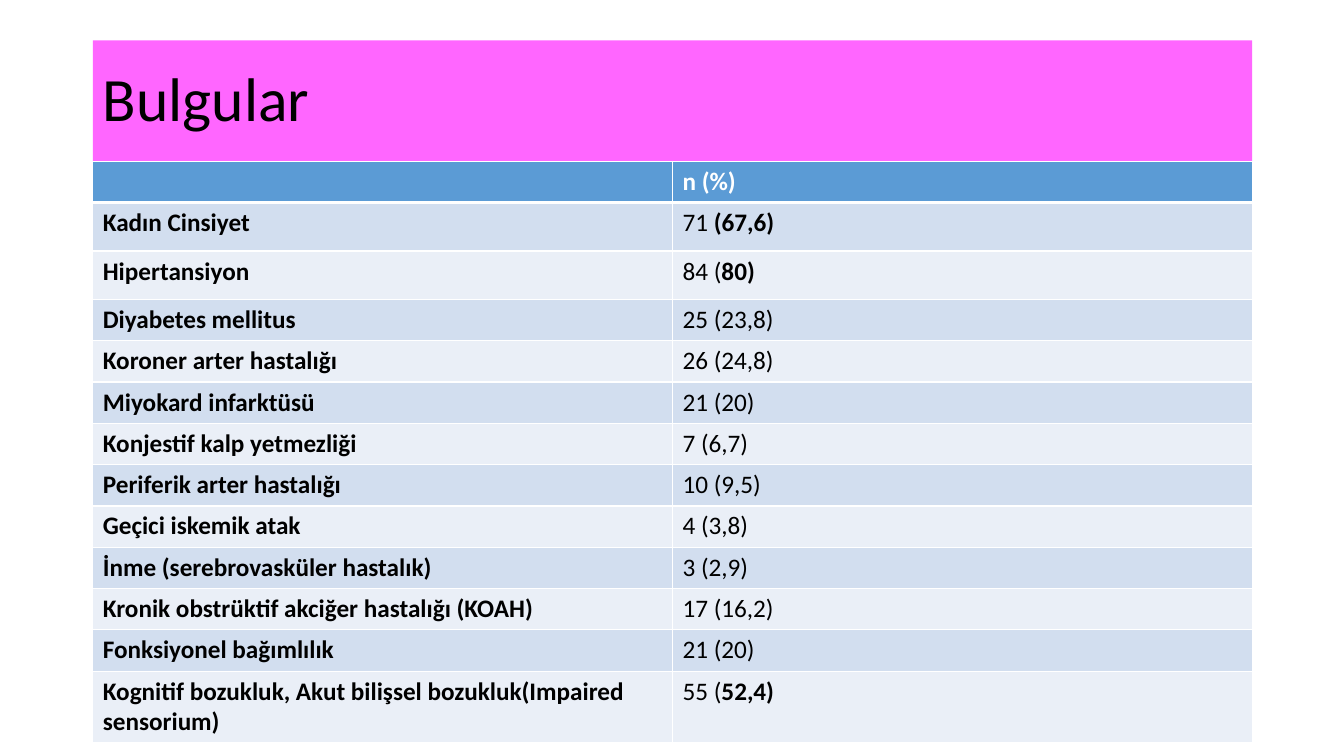
from lxml import etree
from pptx import Presentation
from pptx.dml.color import RGBColor
from pptx.enum.text import MSO_ANCHOR, MSO_AUTO_SIZE, PP_ALIGN
from pptx.oxml.ns import qn
from pptx.util import Inches, Pt

MIDDLE = MSO_ANCHOR.MIDDLE
NO_AUTOFIT = MSO_AUTO_SIZE.NONE
LEFT = PP_ALIGN.LEFT
TITLE_ONLY = 5

COLORS = {
    "title": "FF66FF",
    "header": "5B9BD5",
    "odd": "D2DEEF",
    "even": "EAEFF7",
    "white": "FFFFFF",
    "text": "000000",
}

# Finding, plain part of the value, bold part of the value
FINDINGS = [
    ("Kadın Cinsiyet", "71 ", "(67,6)"),
    ("Hipertansiyon", "84 (", "80)"),
    ("Diyabetes mellitus", "25 (23,8)", ""),
    ("Koroner arter hastalığı", "26 (24,8)", ""),
    ("Miyokard infarktüsü", "21 (20)", ""),
    ("Konjestif kalp yetmezliği", "7 (6,7)", ""),
    ("Periferik arter hastalığı", "10 (9,5)", ""),
    ("Geçici iskemik atak", "4 (3,8)", ""),
    ("İnme (serebrovasküler hastalık)", "3 (2,9)", ""),
    ("Kronik obstrüktif akciğer hastalığı (KOAH)", "17 (16,2)", ""),
    ("Fonksiyonel bağımlılık", "21 (20)", ""),
    ("Kognitif bozukluk, Akut bilişsel bozukluk(Impaired sensorium)", "55 (", "52,4)"),
]
ROW_HEIGHTS = [0.41, 0.48, 0.48] + [0.41] * 10


class SlideBuilder:
    def __init__(self, slide, font="Calibri"):
        self.slide = slide
        self.font_name = font

    def style_font(self, font, size, color):
        font.name = self.font_name
        font.size = Pt(size)
        font.color.rgb = RGBColor.from_string(COLORS[color])

    def title(self, text, left, top, width, height):
        title = self.slide.shapes.title
        title.left, title.top = Inches(left), Inches(top)
        title.width, title.height = Inches(width), Inches(height)
        title.fill.solid()
        title.fill.fore_color.rgb = RGBColor.from_string(COLORS["title"])
        frame = title.text_frame
        frame.text = text
        frame.word_wrap = True
        frame.auto_size = NO_AUTOFIT
        frame.vertical_anchor = MIDDLE
        heading = frame.paragraphs[0]
        heading.alignment = LEFT
        heading.line_spacing = 0.9
        self.style_font(heading.font, 44, "text")

    def borders(self, cell, bottom):
        """Draw white cell edges, 1 pt except for the bottom one."""
        properties = cell._tc.get_or_add_tcPr()
        edges = {"lnL": 1, "lnR": 1, "lnT": 1, "lnB": bottom}
        for position, (edge, width) in enumerate(edges.items()):
            line = etree.Element(qn(f"a:{edge}"), w=str(Pt(width)))
            fill = etree.SubElement(line, qn("a:solidFill"))
            etree.SubElement(fill, qn("a:srgbClr"), val=COLORS["white"])
            properties.insert(position, line)

    def cell(self, cell, parts, fill, color="text", bottom=1):
        """Fill a cell with (text, bold) parts."""
        cell.fill.solid()
        cell.fill.fore_color.rgb = RGBColor.from_string(COLORS[fill])
        self.borders(cell, bottom)
        paragraph = cell.text_frame.paragraphs[0]
        self.style_font(paragraph.font, 18, color)
        for text, bold in parts:
            if text:
                run = paragraph.add_run()
                run.text = text
                self.style_font(run.font, 18, color)
                run.font.bold = bold

    def findings_table(self, left, top, width):
        frame = self.slide.shapes.add_table(
            len(ROW_HEIGHTS), 2, Inches(left), Inches(top),
            Inches(width), Inches(sum(ROW_HEIGHTS)))
        table = frame.table
        for row, height in zip(table.rows, ROW_HEIGHTS):
            row.height = Inches(height)
        for column, heading in enumerate(("", "n (%)")):
            self.cell(table.cell(0, column), [(heading, True)], "header", "white", 3)
        for row, (finding, plain, strong) in enumerate(FINDINGS, 1):
            band = "odd" if row % 2 else "even"
            self.cell(table.cell(row, 0), [(finding, True)], band)
            self.cell(table.cell(row, 1), [(plain, False), (strong, True)], band)


def main():
    presentation = Presentation()
    presentation.slide_width = Inches(13.33)
    presentation.slide_height = Inches(7.5)
    slide = presentation.slides.add_slide(presentation.slide_layouts[TITLE_ONLY])
    builder = SlideBuilder(slide)
    builder.title("Bulgular", 0.92, 0.4, 11.5, 1.21)
    builder.findings_table(0.92, 1.6, 11.5)
    presentation.save("out.pptx")


if __name__ == "__main__":
    main()
